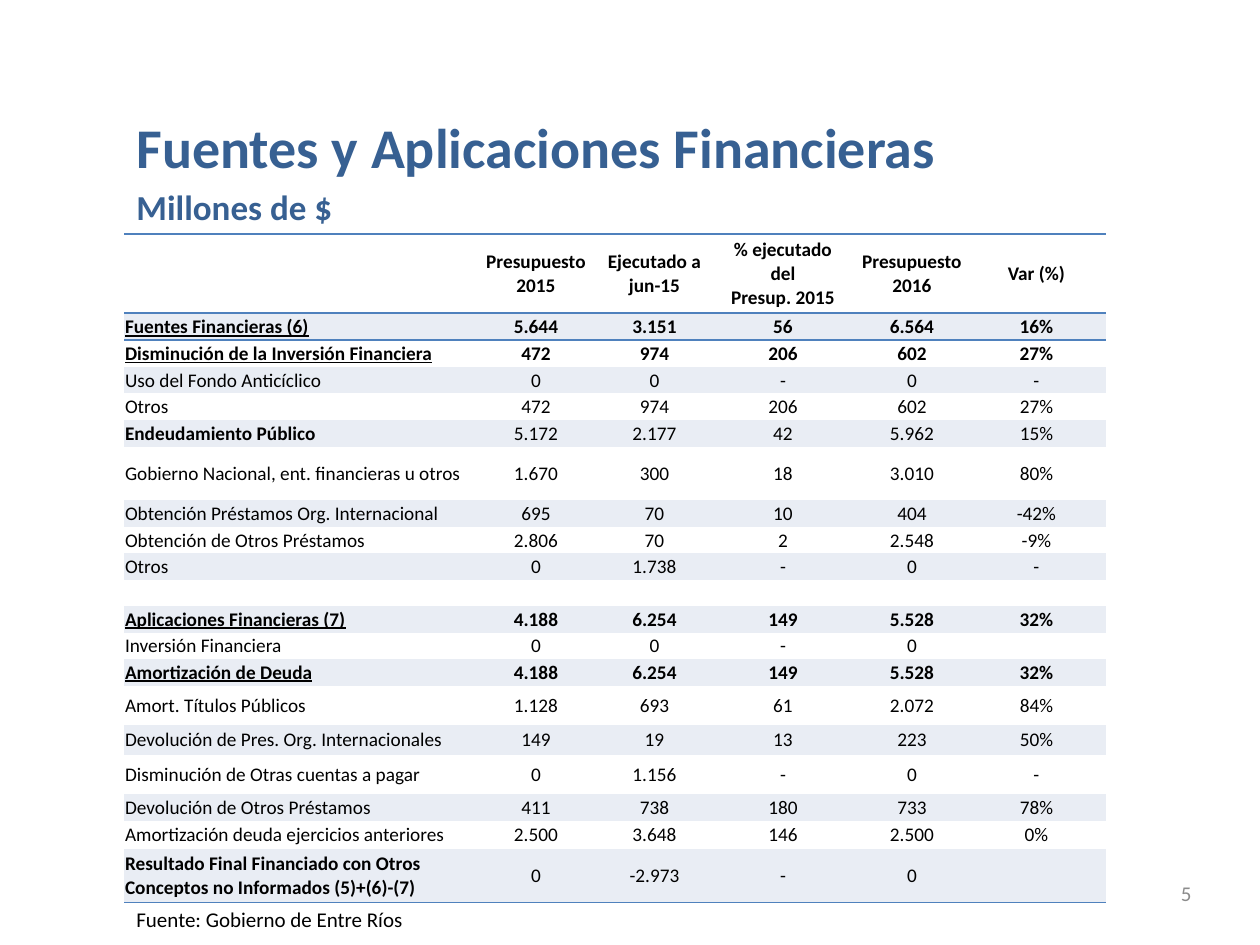
from lxml import etree
from pptx import Presentation
from pptx import util as u
from pptx.dml.color import RGBColor
from pptx.enum import text
from pptx.oxml.ns import qn

PX = u.Inches(1) / 126
FONT = "Calibri"
NAVY, BLACK, GRAY, RULE, BAND = "376092", "000000", "8C8C8C", "4F81BD", "E9EDF4"
PLAIN_STYLE = "{2D5ABB26-0587-4C30-8999-92F81FD0307C}"
LEFT, CENTER, RIGHT = text.PP_ALIGN.LEFT, text.PP_ALIGN.CENTER, text.PP_ALIGN.RIGHT
MIDDLE, TOP = text.MSO_ANCHOR.MIDDLE, text.MSO_ANCHOR.TOP

COLUMNS = [348, 128, 109, 148, 110, 139]
HEADER_HEIGHT = 79
HEADINGS = ["", "Presupuesto 2015", "Ejecutado a jun-15",
            "% ejecutado\ndel\nPresup. 2015", "Presupuesto 2016", "Var (%)"]
ROWS = [
    (27, "total", "Fuentes Financieras (6)", "5.644 3.151 56 6.564 16%"),
    (27, "total", "Disminución de la Inversión Financiera", "472 974 206 602 27%"),
    (26, "item", "Uso del Fondo Anticíclico", "0 0 - 0 -"),
    (27, "item", "Otros", "472 974 206 602 27%"),
    (27, "group", "Endeudamiento Público", "5.172 2.177 42 5.962 15%"),
    (53, "item", "Gobierno Nacional, ent. financieras u otros", "1.670 300 18 3.010 80%"),
    (27, "item", "Obtención Préstamos Org. Internacional", "695 70 10 404 -42%"),
    (26, "item", "Obtención de Otros Préstamos", "2.806 70 2 2.548 -9%"),
    (27, "item", "Otros", "0 1.738 - 0 -"),
    (26, "item", "", ""),
    (27, "total", "Aplicaciones Financieras (7)", "4.188 6.254 149 5.528 32%"),
    (26, "item", "Inversión Financiera", "0 0 - 0"),
    (27, "total", "Amortización de Deuda", "4.188 6.254 149 5.528 32%"),
    (39, "item", "Amort. Títulos Públicos", "1.128 693 61 2.072 84%"),
    (30, "item", "Devolución de Pres. Org. Internacionales", "149 19 13 223 50%"),
    (39, "item", "Disminución de Otras cuentas a pagar", "0 1.156 - 0 -"),
    (27, "item", "Devolución de Otros Préstamos", "411 738 180 733 78%"),
    (28, "item", "Amortización deuda ejercicios anteriores", "2.500 3.648 146 2.500 0%"),
    (54, "group", "Resultado Final Financiado con Otros Conceptos no Informados (5)+(6)-(7)",
     "0 -2.973 - 0"),
]


def px(length):
    """Turn px into EMU."""
    return u.Emu(round(length * PX))


def color(hex_code):
    """Turn a hex string into a colour."""
    return RGBColor.from_string(hex_code)


def write(frame, words, size=11, ink=BLACK, bold=False, underline=False, align=LEFT):
    """Fill a text frame with one paragraph per line of words."""
    for number, line in enumerate(words.split("\n")):
        paragraph = frame.add_paragraph() if number else frame.paragraphs[0]
        paragraph.alignment = align
        if not line:
            etree.SubElement(paragraph._p, qn("a:endParaRPr"), sz=str(size * 100))
            continue
        run = paragraph.add_run()
        run.text = line
        run.font.name = FONT
        run.font.size = u.Pt(size)
        run.font.color.rgb = color(ink)
        run.font.bold = bold
        run.font.underline = underline


def add_label(slide, box, words, anchor=TOP, **style):
    """Place a wrapped text box in the given box."""
    frame = slide.shapes.add_textbox(*map(px, box)).text_frame
    frame.word_wrap = True
    frame.vertical_anchor = anchor
    write(frame, words, **style)


def add_rule(cell, side):
    """Draw a thin line on one side of a cell."""
    line = etree.SubElement(cell._tc.get_or_add_tcPr(), qn(f"a:{side}"), w=str(u.Pt(1)))
    fill = etree.SubElement(line, qn("a:solidFill"))
    etree.SubElement(fill, qn("a:srgbClr"), val=RULE)


def format_cell(cell, words, banded, rules, **style):
    """Set the rules, fill, margins and text of a cell."""
    for side in rules:
        add_rule(cell, side)
    if banded:
        cell.fill.solid()
        cell.fill.fore_color.rgb = color(BAND)
    else:
        cell.fill.background()
    cell.margin_left = cell.margin_right = cell.margin_top = px(1)
    cell.margin_bottom = 0
    cell.vertical_anchor = MIDDLE
    write(cell.text_frame, words, **style)


def add_finances(slide, left, top):
    """Build the table of sources and uses from its top left corner."""
    heights = [HEADER_HEIGHT] + [row[0] for row in ROWS]
    box = (left, top, sum(COLUMNS), sum(heights))
    table = slide.shapes.add_table(len(heights), len(COLUMNS), *map(px, box)).table
    table.first_row = table.horz_banding = False
    table._tbl.tblPr.find(qn("a:tableStyleId")).text = PLAIN_STYLE
    for column, width in zip(table.columns, COLUMNS):
        column.width = px(width)
    for row, height in zip(table.rows, heights):
        row.height = px(height)
    for index, heading in enumerate(HEADINGS):
        format_cell(table.cell(0, index), heading, False, ["lnT", "lnB"],
                    bold=True, align=CENTER)
    for number, (_, kind, concept, figures) in enumerate(ROWS, 1):
        banded = number % 2 == 1
        rules = {1: ["lnT"], len(ROWS): ["lnB"]}.get(number, [])
        values = figures.split()
        values += [""] * (len(COLUMNS) - 1 - len(values))
        format_cell(table.cell(number, 0), concept, banded, rules,
                    bold=kind != "item", underline=kind == "total")
        for index, value in enumerate(values, 1):
            format_cell(table.cell(number, index), value, banded, rules,
                        bold=kind == "total", align=CENTER)


def add_heading(slide, left, top):
    """Place the title and the unit below it."""
    add_label(slide, (left, top, 963, 81), "Fuentes y Aplicaciones Financieras",
              size=32, ink=NAVY, bold=True)
    add_label(slide, (left, top + 73, 814, 55), "Millones de $",
              size=20, ink=NAVY, bold=True)


def add_footer(slide, left, top):
    """Place the source line and the page number."""
    add_label(slide, (left, top, 769, 38), "Fuente: Gobierno de Entre Ríos", size=12)
    add_label(slide, (left + 786, top - 32, 294, 50), "5", anchor=MIDDLE,
              size=12, ink=GRAY, align=RIGHT)


def main():
    """Build and save the slide."""
    deck = Presentation()
    deck.slide_width, deck.slide_height = px(1260), px(945)
    slide = deck.slides.add_slide(deck.slide_layouts[6])
    add_heading(slide, 124, 106)
    add_finances(slide, 124, 234)
    add_footer(slide, 124, 900)
    deck.save("out.pptx")


if __name__ == "__main__":
    main()
